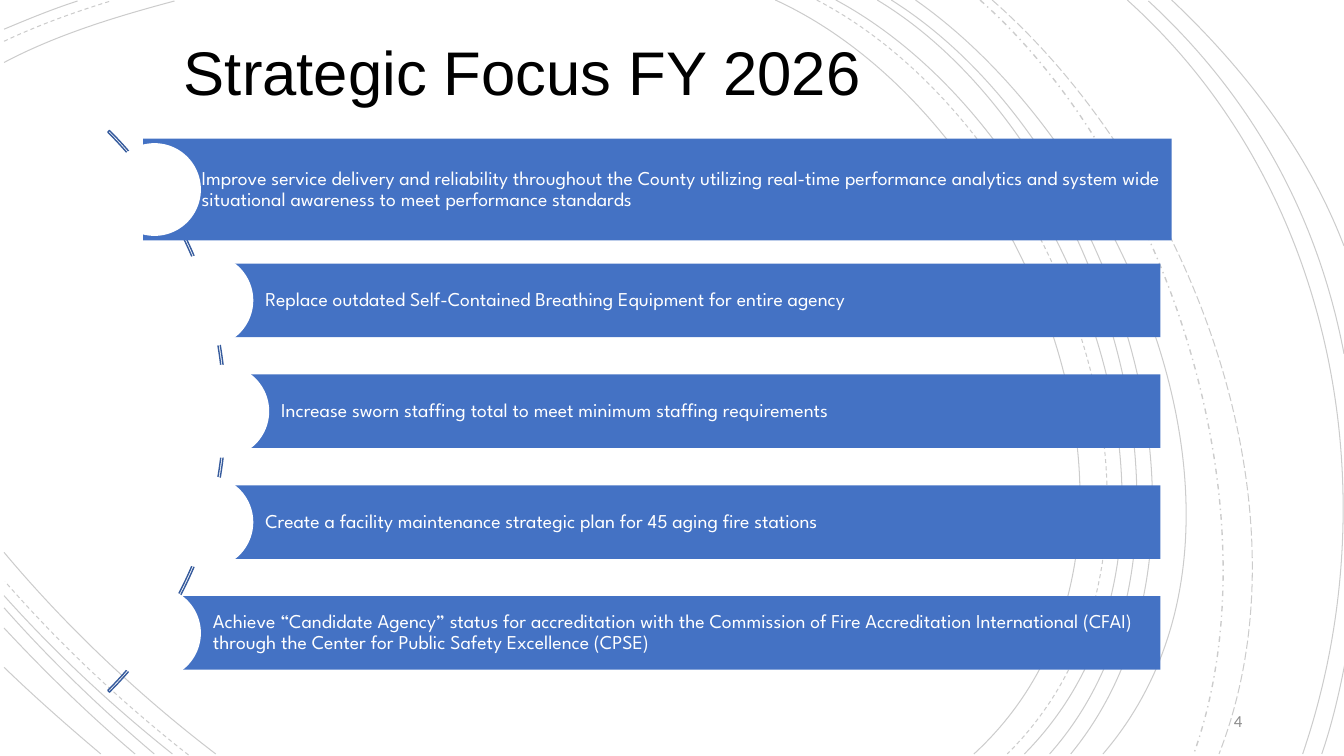
import math
import dataclasses
import pptx
import pptx.util
import pptx.dml.color
import pptx.enum.dml
import pptx.enum.shapes
import pptx.enum.text
import pptx.oxml.ns
import lxml.etree

SHAPE = pptx.enum.shapes.MSO_SHAPE
ALIGN = pptx.enum.text.PP_ALIGN
ANCHOR = pptx.enum.text.MSO_ANCHOR
DASH = pptx.enum.dml.MSO_LINE
COLS, ROWS = 13.33, 7.5
CELL = pptx.util.Inches(1)


@dataclasses.dataclass(frozen=True)
class Theme:
    ink: str = "000000"
    paper: str = "FFFFFF"
    bar: str = "4472C4"
    arc: str = "365B9D"
    faint: str = "8C8C8C"
    head: str = "Arial"
    body: str = "League Spartan"
    foot: str = "Calibri"
    big: int = 44
    mid: int = 14
    small: int = 12
    thin: float = 0.75
    full: float = 1
    haze: int = 20


THEME = Theme()

STRANDS = [
    (DASH.SOLID, THEME.thin, [
        (7.69, 0, 10.2, 1.15, 11.92, 5.4, 9.66, 7.48),
        (0.04, 0.62, 0.57, 0.34, 1.17, 0.16, 1.73, 0.01),
        (2.14, 7.48, 1.38, 6.9, 0.66, 6.22, 0.04, 5.48),
        (8.29, 0, 10.65, 1.27, 12.25, 5.37, 10.16, 7.48),
        (0.04, 0.29, 0.28, 0.19, 0.52, 0.09, 0.77, 0.01),
        (1.71, 7.48, 1.12, 7.01, 0.55, 6.48, 0.04, 5.91),
        (8.7, 0, 10.91, 1.33, 12.25, 5.41, 10.41, 7.48),
        (1.53, 7.48, 1.01, 7.04, 0.5, 6.55, 0.04, 6.03),
        (8.84, 0, 11.04, 1.38, 12.38, 5.33, 10.62, 7.48),
        (1.34, 7.48, 0.88, 7.09, 0.45, 6.67, 0.04, 6.23),
        (9.08, 0, 11.18, 1.47, 12.82, 5.29, 10.94, 7.48),
        (1, 7.48, 0.68, 7.21, 0.35, 6.92, 0.04, 6.62),
        (11.18, 0, 13.24, 1.85, 13.8, 4.9, 12.92, 7.48),
        (11.39, 0.01, 12.42, 0.96, 13.07, 2.14, 13.33, 3.51),
        (13.34, 6.58, 13.28, 6.89, 13.21, 7.19, 13.11, 7.48),
        (11.62, 0, 12.35, 0.69, 12.97, 1.5, 13.33, 2.44)]),
    (DASH.DASH, THEME.thin, [
        (8.1, 0, 10.5, 1.25, 12.12, 5.37, 9.99, 7.48),
        (0.04, 0.41, 0.38, 0.25, 0.74, 0.12, 1.1, 0.01),
        (1.87, 7.49, 1.22, 6.98, 0.6, 6.4, 0.05, 5.77)]),
    (DASH.DASH_DOT, THEME.full, [
        (9.72, 0, 11.59, 1.66, 12.69, 5.09, 11.84, 7.48)]),
    (DASH.LONG_DASH, THEME.thin, [
        (9.84, 0, 11.77, 1.69, 13.06, 4.99, 12.09, 7.48)]),
]

GOALS = [
    "Improve service delivery and reliability throughout the County utilizing "
    "real-time performance analytics and system wide situational awareness "
    "to meet performance standards",
    "Replace outdated Self-Contained Breathing Equipment for entire agency",
    "Increase sworn staffing total to meet minimum staffing requirements",
    "Create a facility maintenance strategic plan for 45 aging fire stations",
    "Achieve “Candidate Agency” status for accreditation with the Commission "
    "of Fire Accreditation International (CFAI) through the Center for Public "
    "Safety Excellence (CPSE)",
]


def grid(*cells):
    return [round(n * CELL) for n in cells]


def color(code):
    return pptx.dml.color.RGBColor.from_string(code)


def write(shape, text, font, size, ink, align, anchor, space=1.0):
    frame = shape.text_frame
    frame.word_wrap = True
    frame.vertical_anchor = anchor
    para = frame.paragraphs[0]
    para.text = text
    para.alignment = align
    para.line_spacing = space
    para.font.name = font
    para.font.size = pptx.util.Pt(size)
    para.font.color.rgb = color(ink)
    return frame


def block(slide, kind, box, fill=None):
    shape = slide.shapes.add_shape(kind, *grid(*box))
    shape.shadow.inherit = False
    shape.line.fill.background()
    if fill:
        shape.fill.solid()
        shape.fill.fore_color.rgb = color(fill)
    else:
        shape.fill.background()
    return shape


def stroke(shape, ink, width):
    shape.line.color.rgb = color(ink)
    shape.line.width = pptx.util.Pt(width)


def strand(slide, points, dash, width):
    spots = grid(*points)
    pairs = list(zip(spots[::2], spots[1::2]))
    pen = slide.shapes.build_freeform(*pairs[0])
    pen.add_line_segments(pairs[1:], close=False)
    shape = pen.convert_to_shape()
    shape.shadow.inherit = False
    shape.fill.background()
    stroke(shape, THEME.ink, width)
    shape.line.dash_style = dash
    name = pptx.oxml.ns.qn
    tint = shape.line._ln.find(".//" + name("a:srgbClr"))
    alpha = lxml.etree.SubElement(tint, name("a:alpha"))
    alpha.set("val", str(THEME.haze * 1000))
    steps = list(shape._element.iter(name("a:lnTo")))
    trace = steps[0].getparent()
    curve = lxml.etree.SubElement(trace, name("a:cubicBezTo"))
    for step in steps:
        curve.append(step[0])
        trace.remove(step)


def spine(slide, mid, row, size):
    arc = block(slide, SHAPE.BLOCK_ARC,
                (mid - size / 2, row - size / 2, size, size))
    for index, value in enumerate((189, 27, 0.003)):
        arc.adjustments[index] = value
    stroke(arc, THEME.arc, THEME.full)


def goal(slide, text, box, dot):
    bar = block(slide, SHAPE.RECTANGLE, box, THEME.bar)
    frame = write(bar, text, THEME.body, THEME.mid, THEME.paper,
                  ALIGN.LEFT, ANCHOR.MIDDLE, 0.9)
    frame.margin_left, frame.margin_top = grid(0.58, 0.04)
    frame.margin_right = frame.margin_bottom = frame.margin_top
    block(slide, SHAPE.OVAL, dot, THEME.paper)


def goals(slide):
    hub, row, bend, pitch, ball = -1.7, 4.08, 3.91, 1.1, 0.92
    spine(slide, hub, row, 7.88)
    for index, text in enumerate(GOALS):
        rise = (index - 2) * pitch
        left = hub + math.sqrt(bend ** 2 - rise ** 2)
        mid = row + rise
        start, end, tall = (left, 11.51, 0.73) if index else (1.42, 11.62, 1.01)
        goal(slide, text, (start, mid - tall / 2, end - start, tall),
             (left - ball / 2, mid - ball / 2, ball, ball))


def label(slide, box, *style):
    write(slide.shapes.add_textbox(*grid(*box)), *style)


def main():
    deck = pptx.Presentation()
    deck.slide_width, deck.slide_height = grid(COLS, ROWS)
    slide = deck.slides.add_slide(deck.slide_layouts[6])
    for dash, width, curves in STRANDS:
        for points in curves:
            strand(slide, points, dash, width)
    label(slide, (0.15, 0.37, 10.24, 0.89), "Strategic Focus FY 2026 ",
          THEME.head, THEME.big, THEME.ink, ALIGN.CENTER, ANCHOR.TOP, 0.9)
    goals(slide)
    label(slide, (9.42, 6.95, 3, 0.4), "4", THEME.foot, THEME.small,
          THEME.faint, ALIGN.RIGHT, ANCHOR.MIDDLE)
    deck.save("out.pptx")


if __name__ == "__main__":
    main()
